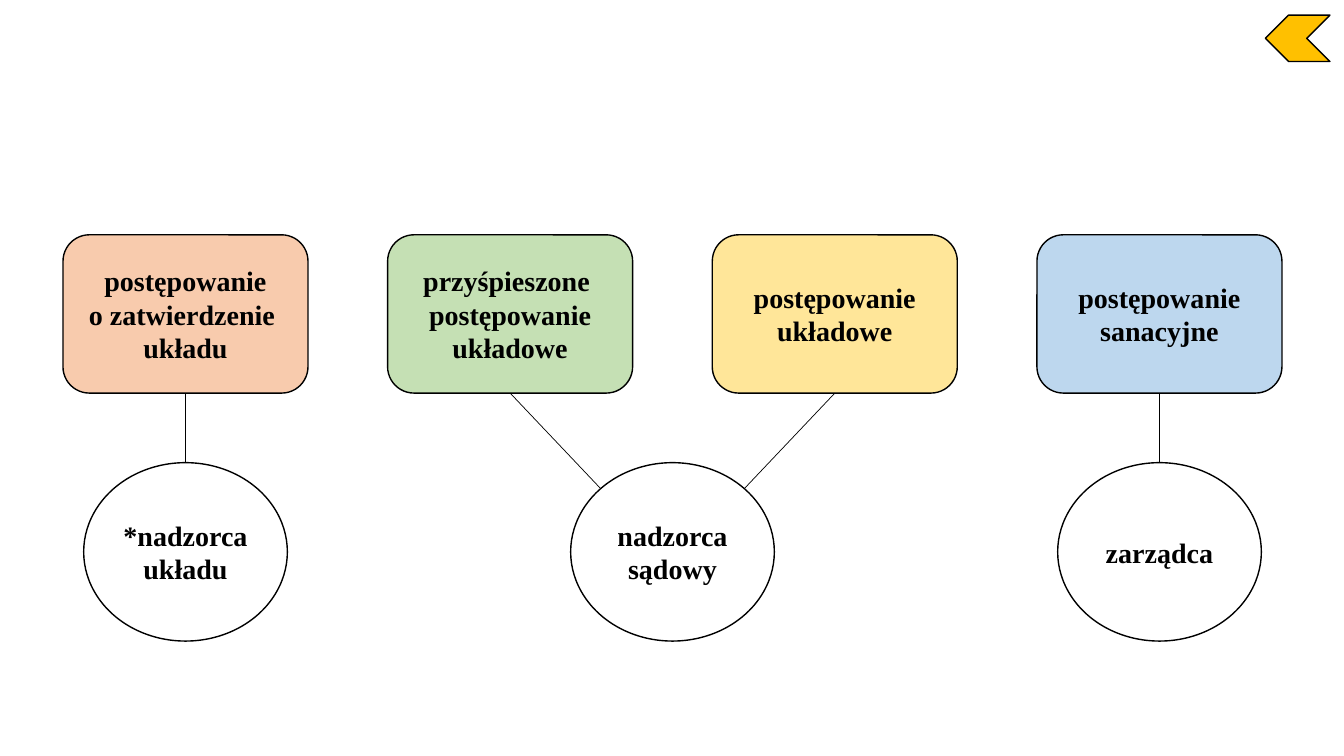
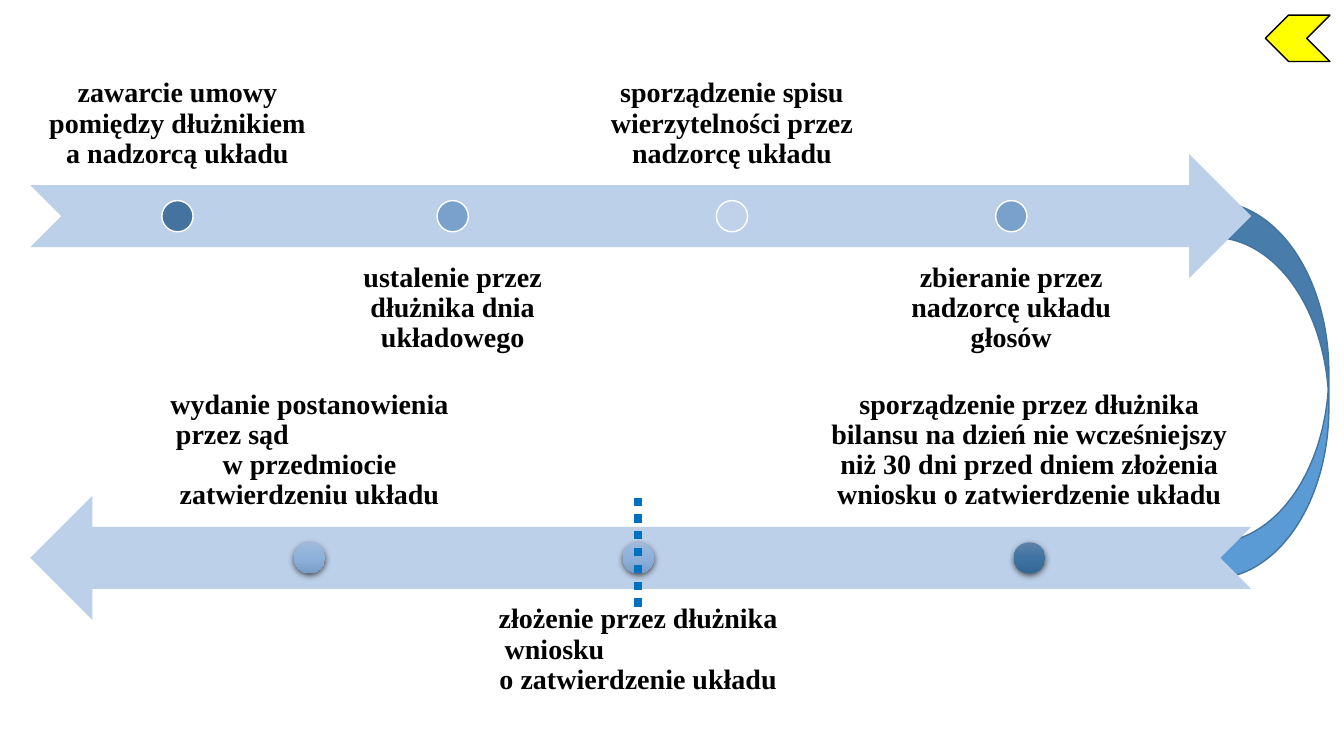
from copy import deepcopy

from lxml.etree import SubElement
from pptx import Presentation
from pptx.dml.color import RGBColor
from pptx.enum.dml import MSO_LINE
from pptx.enum.shapes import MSO_CONNECTOR, MSO_SHAPE as SHAPE
from pptx.enum.text import MSO_ANCHOR as ANCHOR, PP_ALIGN as ALIGN
from pptx.oxml.ns import qn
from pptx.util import Inches, Pt

FONT = "Times New Roman"
BLACK, WHITE = "000000", "FFFFFF"
ARROW_BLUE, ARC_BLUE, DARK_BLUE = "BDD0E9", "5B9BD5", "43739E"
MID_BLUE, PALE_BLUE, FILING_BLUE = "7AA1CC", "C0D2EA", "0070C0"
MID_GRADIENT = ("9EBADC", "8DB1DA", "799DC6")
DARK_GRADIENT = ("5F83AA", "3F73A2", "346694")


def rgb(value):
    return RGBColor.from_string(value)


class Deck:
    """Holds the presentation, its style and the current slide."""

    def __init__(self):
        self.prs = Presentation()
        self.prs.slide_width, self.prs.slide_height = Inches(13.33), Inches(7.5)
        self.slide = None

    def new_slide(self):
        self.slide = self.prs.slides.add_slide(self.prs.slide_layouts[6])

    def back_marker(self, fill):
        self.shape(SHAPE.CHEVRON, 12.55, 0.15, 0.64, 0.46, fill, BLACK).rotation = 180

    def shape(self, kind, left, top, width, height, fill, line=None):
        shape = self.slide.shapes.add_shape(
            kind, Inches(left), Inches(top), Inches(width), Inches(height))
        shape.shadow.inherit = False
        if isinstance(fill, tuple):
            self.gradient(shape, fill)
        else:
            shape.fill.solid()
            shape.fill.fore_color.rgb = rgb(fill)
        if line:
            shape.line.color.rgb = rgb(line)
            shape.line.width = Pt(1)
        else:
            shape.line.fill.background()
        return shape

    def gradient(self, shape, colors):
        shape.fill.gradient()
        stops = shape._element.spPr.find(".//" + qn("a:gsLst"))
        stops.append(deepcopy(stops[0]))
        for stop, color, position in zip(shape.fill.gradient_stops, colors, (0, 0.5, 1)):
            stop.color.rgb = rgb(color)
            stop.position = position
        shape.fill.gradient_angle = 270

    def soft_shadow(self, shape):
        effects = shape._element.spPr.find(qn("a:effectLst"))
        shadow = SubElement(effects, qn("a:outerShdw"), blurRad=str(Pt(4.5)),
                            dist=str(Pt(1.5)), dir="5400000", rotWithShape="0")
        color = SubElement(shadow, qn("a:srgbClr"), val=BLACK)
        SubElement(color, qn("a:alpha"), val="63000")

    def set_text(self, shape, text, margin=0.0, anchor=ANCHOR.MIDDLE, spacing=1.0):
        """Set one paragraph per line; a line starting with a tab is left-aligned."""
        frame = shape.text_frame
        frame.word_wrap = True
        frame.vertical_anchor = anchor
        frame.margin_left = frame.margin_right = Inches(margin)
        frame.margin_top = frame.margin_bottom = Inches(margin)
        for index, line in enumerate(text.split("\n")):
            paragraph = frame.paragraphs[0] if index == 0 else frame.add_paragraph()
            paragraph.text = line.lstrip("\t")
            paragraph.alignment = ALIGN.CENTER
            if line.startswith("\t"):
                paragraph.alignment = ALIGN.LEFT
                paragraph._p.get_or_add_pPr().set("marL", str(Inches(0.07)))
            paragraph.line_spacing = spacing
            paragraph.font.name = FONT
            paragraph.font.size = Pt(20)
            paragraph.font.bold = True
            paragraph.font.color.rgb = rgb(BLACK)

    def label(self, center, top, width, text, anchor):
        box = self.slide.shapes.add_textbox(
            Inches(center - width / 2), Inches(top), Inches(width), Inches(1.23))
        self.set_text(box, text, 0.16, anchor, 0.9)

    def line(self, start, end, color=BLACK, width=0.5):
        line = self.slide.shapes.add_connector(
            MSO_CONNECTOR.STRAIGHT, *(Inches(value) for value in (*start, *end)))
        line.line.color.rgb = rgb(color)
        line.line.width = Pt(width)
        SubElement(line._element.spPr, qn("a:effectLst"))
        return line


def supervisors_slide(deck):
    deck.new_slide()
    first_center, pitch = 1.84, 3.22
    box_width, box_height, box_top = 2.43, 1.57, 2.33
    oval_width, oval_height, oval_top = 2.02, 1.77, 4.59
    box_bottom = box_top + box_height

    # Kinds of proceedings
    proceedings = [
        ("postępowanie\no zatwierdzenie \nukładu", "F8CBAD"),
        ("przyśpieszone \npostępowanie\nukładowe", "C5E0B4"),
        ("postępowanie\nukładowe", "FFE699"),
        ("postępowanie\nsanacyjne", "BDD7EE"),
    ]
    boxes = []
    for column, (text, fill) in enumerate(proceedings):
        left = first_center + column * pitch - box_width / 2
        box = deck.shape(SHAPE.ROUNDED_RECTANGLE, left, box_top, box_width, box_height, fill, BLACK)
        deck.set_text(box, text)
        boxes.append(box)

    # Supervisors, each below the proceedings it serves
    supervisors = [("*nadzorca układu", (0,)), ("nadzorca sądowy", (1, 2)), ("zarządca", (3,))]
    for text, columns in supervisors:
        center = first_center + pitch * sum(columns) / len(columns)
        oval = deck.shape(SHAPE.OVAL, center - oval_width / 2, oval_top,
                          oval_width, oval_height, WHITE, BLACK)
        deck.set_text(oval, text)
        for column in columns:
            box_center = first_center + column * pitch
            if len(columns) == 1:
                link = deck.line((box_center, box_bottom), (center, oval_top))
                link.end_connect(oval, 0)
            else:
                side = 1 if box_center > center else -1
                link = deck.line((box_center, box_bottom), (center + side * 0.71, 4.85))
            link.begin_connect(boxes[column], 2)

    deck.back_marker("FFC000")


def timeline_slide(deck):
    deck.new_slide()
    dot, arrow_height = 0.31, 1.23

    # Turn from the upper to the lower arrow
    turn = deck.shape(SHAPE.CURVED_LEFT_ARROW, 12.03, 2, 1.15, 3.85, ARC_BLUE, DARK_BLUE)
    for index, value in enumerate((0.309, 0.5, 0.208)):
        turn.adjustments[index] = value
    deck.back_marker("FFFF00")

    # Rows: arrow top, rotation, label tops, dot outline, steps (centre, width, above, fill, text)
    rows = [
        (1.53, 0, 0.61, 2.45, WHITE, [
            (1.76, 2.91, True, DARK_BLUE, "zawarcie umowy pomiędzy dłużnikiem a nadzorcą układu"),
            (4.49, 2.32, False, MID_BLUE, "ustalenie przez dłużnika dnia układowego"),
            (7.26, 2.99, True, PALE_BLUE, "sporządzenie spisu wierzytelności przez nadzorcę układu"),
            (10.03, 2.32, False, MID_BLUE, "zbieranie przez nadzorcę układu głosów"),
        ]),
        (4.92, 180, 4, 5.84, None, [
            (10.21, 4.36, True, DARK_GRADIENT,
             "sporządzenie przez dłużnika bilansu na dzień nie wcześniejszy niż 30 dni "
             "przed dniem złożenia wniosku o zatwierdzenie układu"),
            (6.33, 3.11, False, MID_GRADIENT,
             "złożenie przez dłużnika\n\twniosku\no zatwierdzenie układu"),
            (3.07, 3.11, True, MID_GRADIENT,
             "wydanie postanowienia\n\tprzez sąd\nw przedmiocie\nzatwierdzeniu układu"),
        ]),
    ]
    for top, rotation, upper, lower, outline, steps in rows:
        arrow = deck.shape(SHAPE.NOTCHED_RIGHT_ARROW, 0.3, top, 12.11, arrow_height, ARROW_BLUE)
        arrow.rotation = rotation
        for center, width, above, fill, text in steps:
            deck.label(center, upper if above else lower, width, text,
                       ANCHOR.BOTTOM if above else ANCHOR.TOP)
            marker = deck.shape(SHAPE.OVAL, center - dot / 2, top + (arrow_height - dot) / 2,
                                dot, dot, fill, outline)
            if outline is None:
                deck.soft_shadow(marker)

    # Dotted line at the filing of the motion
    filing = deck.line((6.33, 6.02), (6.33, 4.94), FILING_BLUE, 6)
    filing.line.dash_style = MSO_LINE.ROUND_DOT


def main():
    deck = Deck()
    supervisors_slide(deck)
    timeline_slide(deck)
    deck.prs.save("out.pptx")


if __name__ == "__main__":
    main()
